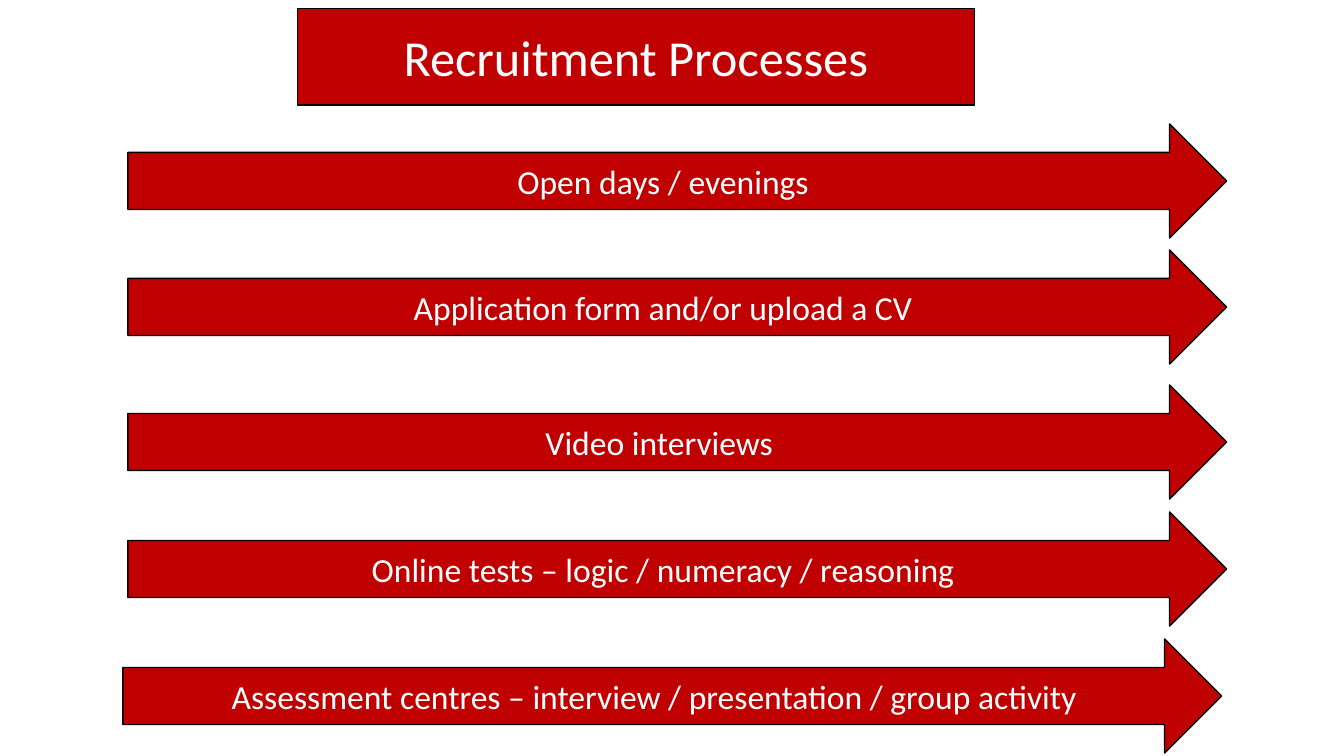
from dataclasses import dataclass

from pptx import Presentation
from pptx.dml.color import RGBColor
from pptx.enum.shapes import MSO_SHAPE as Shape
from pptx.enum.text import MSO_ANCHOR as Anchor, PP_ALIGN as Align
from pptx.util import Pt


@dataclass(frozen=True)
class Theme:
    font: str = "Calibri"
    fill: RGBColor = RGBColor(0xC0, 0x00, 0x00)
    outline: RGBColor = RGBColor(0x00, 0x00, 0x00)
    text: RGBColor = RGBColor(0xFF, 0xFF, 0xFF)
    title_size: int = 36
    stage_size: int = 24


THEME = Theme()

ARROW_WIDTH, ARROW_HEIGHT = 784.8, 81.5

# Left, top and label of each stage arrow
STAGES = [
    (91.4, 88.5, "Open days / evenings"),
    (91.4, 178.5, "Application form and/or upload a CV"),
    (91.4, 275, "Video interviews "),
    (91.4, 365.7, "Online tests – logic / numeracy / reasoning"),
    (87.8, 456.4, "Assessment centres – interview / presentation / group activity "),
]


def add_labelled_shape(slide, kind, left, top, width, height, text, size):
    shape = slide.shapes.add_shape(kind, Pt(left), Pt(top), Pt(width), Pt(height))
    shape.shadow.inherit = False
    shape.fill.solid()
    shape.fill.fore_color.rgb = THEME.fill
    shape.line.color.rgb = THEME.outline
    shape.line.width = Pt(1)

    frame = shape.text_frame
    frame.word_wrap = True
    frame.vertical_anchor = Anchor.MIDDLE
    paragraph = frame.paragraphs[0]
    paragraph.text = text
    paragraph.alignment = Align.CENTER
    paragraph.font.name = THEME.font
    paragraph.font.size = Pt(size)
    paragraph.font.color.rgb = THEME.text


def main():
    presentation = Presentation()
    presentation.slide_width = Pt(960)
    presentation.slide_height = Pt(540)
    slide = presentation.slides.add_slide(presentation.slide_layouts[6])

    add_labelled_shape(slide, Shape.RECTANGLE, 212.4, 6, 483.8, 69,
                       "Recruitment Processes", THEME.title_size)
    for left, top, label in STAGES:
        add_labelled_shape(slide, Shape.RIGHT_ARROW, left, top,
                           ARROW_WIDTH, ARROW_HEIGHT, label, THEME.stage_size)

    presentation.save("out.pptx")


if __name__ == "__main__":
    main()
